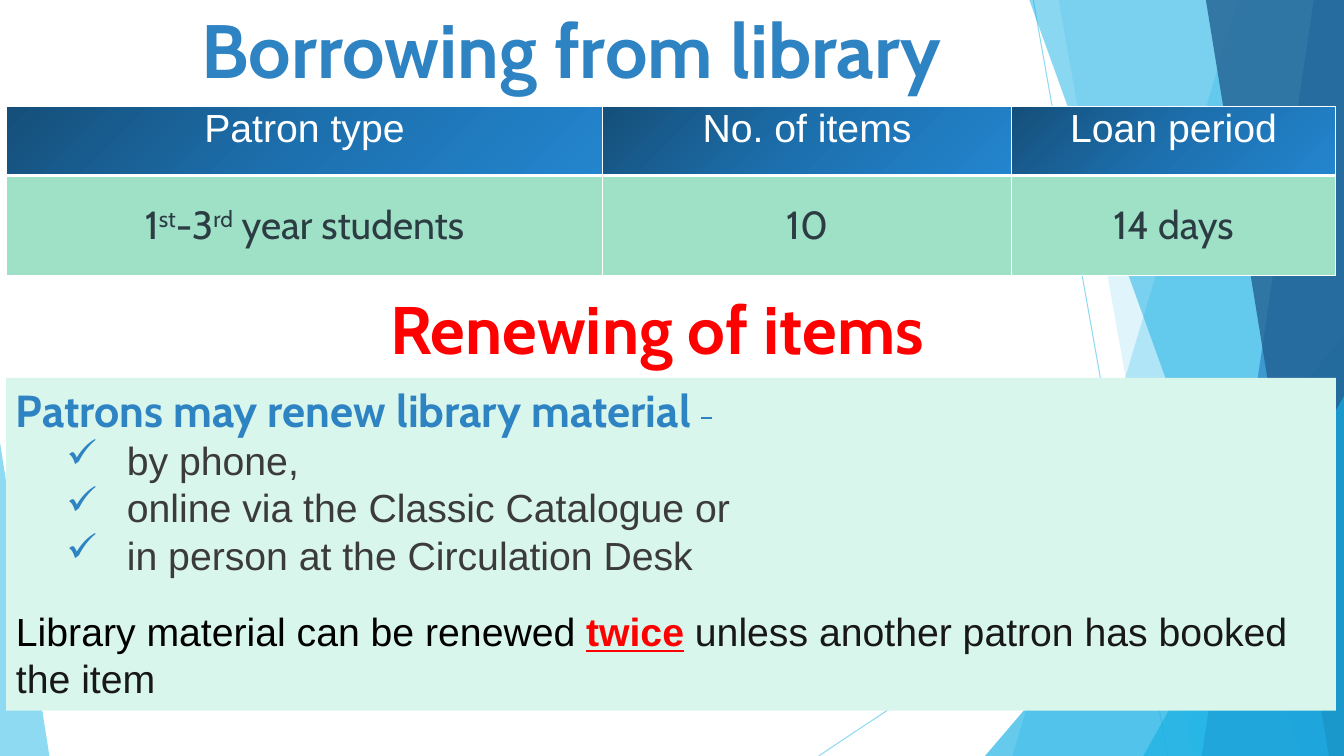
from copy import deepcopy

from lxml.etree import SubElement
from pptx import Presentation
from pptx.dml.color import RGBColor
from pptx.enum.shapes import MSO_CONNECTOR, MSO_SHAPE
from pptx.enum.text import MSO_ANCHOR, PP_ALIGN
from pptx.oxml import parse_xml
from pptx.oxml.ns import nsdecls, qn
from pptx.util import Inches, Pt

WIDTH, HEIGHT = Inches(13.33), Inches(7.5)
MARGIN, CONTENT_WIDTH = 0.45, 98.95

WHITE = RGBColor(0xFF, 0xFF, 0xFF)
BLACK = RGBColor(0x00, 0x00, 0x00)
RED = RGBColor(0xFF, 0x00, 0x00)
BLUE = RGBColor(0x2E, 0x83, 0xC3)
SKY = RGBColor(0x5F, 0xCB, 0xEF)
CYAN = RGBColor(0x17, 0xB0, 0xE4)
NAVY = RGBColor(0x22, 0x62, 0x92)
MINT = RGBColor(0x9F, 0xE1, 0xC6)
PALE_MINT = RGBColor(0xD9, 0xF6, 0xEC)
SLATE = RGBColor(0x2C, 0x3C, 0x43)
GREY = RGBColor(0x3B, 0x3B, 0x3B)
INK = RGBColor(0x18, 0x18, 0x18)
HEADER_STOPS = (RGBColor(0x15, 0x4F, 0x7A), RGBColor(0x1D, 0x70, 0xAE),
                RGBColor(0x23, 0x85, 0xCE))


def across(percent):
    return round(WIDTH * percent / 100)


def down(percent):
    return round(HEIGHT * percent / 100)


def area(left, top, width, height):
    """Turn percentages of the slide into a left, top, width, height tuple."""
    return across(left), down(top), across(width), down(height)


def set_opacity(element, percent):
    for color in element.iter(qn("a:srgbClr")):
        SubElement(color, qn("a:alpha"), val=str(percent * 1000))


def paint(shape, color, opacity=100):
    shape.shadow.inherit = False
    shape.line.fill.background()
    shape.fill.solid()
    shape.fill.fore_color.rgb = color
    if opacity < 100:
        set_opacity(shape._element.spPr, opacity)


def add_ray(slide, start, end):
    ray = slide.shapes.add_connector(
        MSO_CONNECTOR.STRAIGHT, across(start[0]), down(start[1]), across(end[0]), down(end[1]))
    ray.line.color.rgb = SKY
    ray.line.width = Pt(0.75)
    properties = ray._element.spPr
    set_opacity(properties, 70)
    SubElement(properties, qn("a:effectLst"))


def add_facet(slide, top_x, bottom_x, color, opacity):
    """Fill the area between a slanted edge and the slide's right edge."""
    outline = slide.shapes.build_freeform(across(top_x), 0)
    outline.add_line_segments([(WIDTH, 0), (WIDTH, HEIGHT), (across(bottom_x), HEIGHT)])
    paint(outline.convert_to_shape(), color, opacity)


def add_corner(slide, left, top, width, apex, color, opacity):
    """Stand a triangle on the slide's bottom edge."""
    corner = slide.shapes.add_shape(
        MSO_SHAPE.ISOSCELES_TRIANGLE, *area(left, top, width, 100 - top))
    corner.adjustments[0] = apex
    paint(corner, color, opacity)


def add_backdrop(slide):
    add_ray(slide, (76.88, 0), (86.87, 100))
    add_ray(slide, (100, 53.73), (60.91, 100))
    add_facet(slide, 92.12, 75.32, SKY, 36)
    add_facet(slide, 78.77, 88.75, SKY, 20)
    add_corner(slide, 73.29, 44.4, 26.71, 1, CYAN, 66)
    add_facet(slide, 76.59, 96.85, CYAN, 50)
    add_facet(slide, 97.75, 89.42, BLUE, 70)
    add_facet(slide, 89.72, 98.87, NAVY, 80)
    add_corner(slide, 85.07, 52.4, 14.93, 1, CYAN, 66)
    add_corner(slide, 0, 58.53, 3.68, 0, SKY, 70)


def style(font, name, size, color, bold=False):
    font.name, font.size, font.bold = name, Pt(size), bold
    font.color.rgb = color


def write_heading(box, text, size, color, align):
    frame = box.text_frame
    frame.text = text
    frame.word_wrap = False
    frame.vertical_anchor = MSO_ANCHOR.TOP
    para = frame.paragraphs[0]
    para.alignment = align
    style(para.font, "Cabin", size, color, True)


def add_span(para, text, color=None, bold=None):
    span = para.add_run()
    span.text = text
    if color is not None:
        span.font.color.rgb = color
    span.font.bold = bold
    return span


def border_cell(cell, top, bottom):
    properties = cell._tc.get_or_add_tcPr()
    for place, (side, points) in enumerate(zip("LRTB", (1, 1, top, bottom))):
        properties.insert(place, parse_xml(
            f'<a:ln{side} {nsdecls("a")} w="{Pt(points)}"><a:solidFill>'
            f'<a:srgbClr val="{WHITE}"/></a:solidFill></a:ln{side}>'))


def fill_header(cell):
    cell.fill.gradient()
    cell.fill.gradient_angle = 315
    first = cell._tc.tcPr.find(".//" + qn("a:gs"))
    first.addnext(deepcopy(first))
    for place, (stop, color) in enumerate(zip(cell.fill.gradient_stops, HEADER_STOPS)):
        stop.position = place / 2
        stop.color.rgb = color


def add_loan_table(slide):
    columns, rows = (44.41, 30.38, 24.16), (9.07, 13.2)
    content = (
        (("Patron type",), ("No. of items",), ("Loan period",)),
        (("1", "st", "-3", "rd", " year students"), ("10",), ("14 days",)),
    )
    table = slide.shapes.add_table(
        len(rows), len(columns), *area(MARGIN, 14.13, CONTENT_WIDTH, sum(rows))).table
    for column, share in zip(table.columns, columns):
        column.width = across(share)
    for r, (share, texts) in enumerate(zip(rows, content)):
        table.rows[r].height = down(share)
        for c, parts in enumerate(texts):
            cell = table.cell(r, c)
            cell.margin_top = cell.margin_bottom = 0
            cell.margin_left = cell.margin_right = Inches(0.09)
            para = cell.text_frame.paragraphs[0]
            para.alignment = PP_ALIGN.CENTER
            for part in parts:
                span = add_span(para, part)
                if part in ("st", "rd"):
                    span._r.get_or_add_rPr().set("baseline", "30000")
            if r == 0:
                style(para.font, "Arial", 28, WHITE)
                fill_header(cell)
                border_cell(cell, 1, 3)
            else:
                style(para.font, "Cabin", 28, SLATE)
                cell.vertical_anchor = MSO_ANCHOR.MIDDLE
                cell.fill.solid()
                cell.fill.fore_color.rgb = MINT
                border_cell(cell, 3, 1)


def add_check_item(frame, text):
    para = frame.add_paragraph()
    para.text = text
    style(para.font, "Arial", 28, GREY)
    properties = para._p.get_or_add_pPr()
    properties.set("marL", str(Inches(1.1)))
    properties.set("indent", str(-Inches(0.6)))
    bullet_color = SubElement(SubElement(properties, qn("a:buClr")), qn("a:srgbClr"))
    bullet_color.set("val", str(BLUE))
    SubElement(properties, qn("a:buChar"), char="✓")
    # Bullet marks must precede the paragraph's default run properties.
    properties.append(properties.find(qn("a:defRPr")))


def add_renewal_panel(slide):
    panel = slide.shapes.add_shape(
        MSO_SHAPE.RECTANGLE, *area(MARGIN, 50, CONTENT_WIDTH, 44))
    paint(panel, PALE_MINT)
    frame = panel.text_frame
    frame.word_wrap = True
    frame.vertical_anchor = MSO_ANCHOR.TOP

    lead = frame.paragraphs[0]
    style(lead.font, "Cabin", 32, BLUE, True)
    add_span(lead, "Patrons may renew library material ")
    add_span(lead, " ")._r.get_or_add_rPr().set("strike", "sngStrike")
    for way in ("by phone,", "online via the Classic Catalogue or",
                "in person at the Circulation Desk"):
        add_check_item(frame, way)

    limit = frame.add_paragraph()
    limit.space_before = Pt(21)
    style(limit.font, "Arial", 28, BLACK)
    add_span(limit, "Library material can be renewed ")
    add_span(limit, "twice", RED, True).font.underline = True
    add_span(limit, " unless another patron has booked the item", INK)
    for para in frame.paragraphs:
        para.alignment = PP_ALIGN.LEFT


def main():
    deck = Presentation()
    deck.slide_width, deck.slide_height = WIDTH, HEIGHT
    slide = deck.slides.add_slide(deck.slide_layouts[5])
    add_backdrop(slide)
    title = slide.shapes.title
    title.left, title.top, title.width, title.height = area(14.25, -0.27, 69.24, 13.47)
    write_heading(title, "Borrowing from library", 54, BLUE, PP_ALIGN.LEFT)
    add_loan_table(slide)
    renewing = slide.shapes.add_textbox(*area(24.61, 37.33, 48.54, 12.13))
    write_heading(renewing, "Renewing of items", 48, RED, PP_ALIGN.CENTER)
    add_renewal_panel(slide)
    deck.save("out.pptx")


if __name__ == "__main__":
    main()
